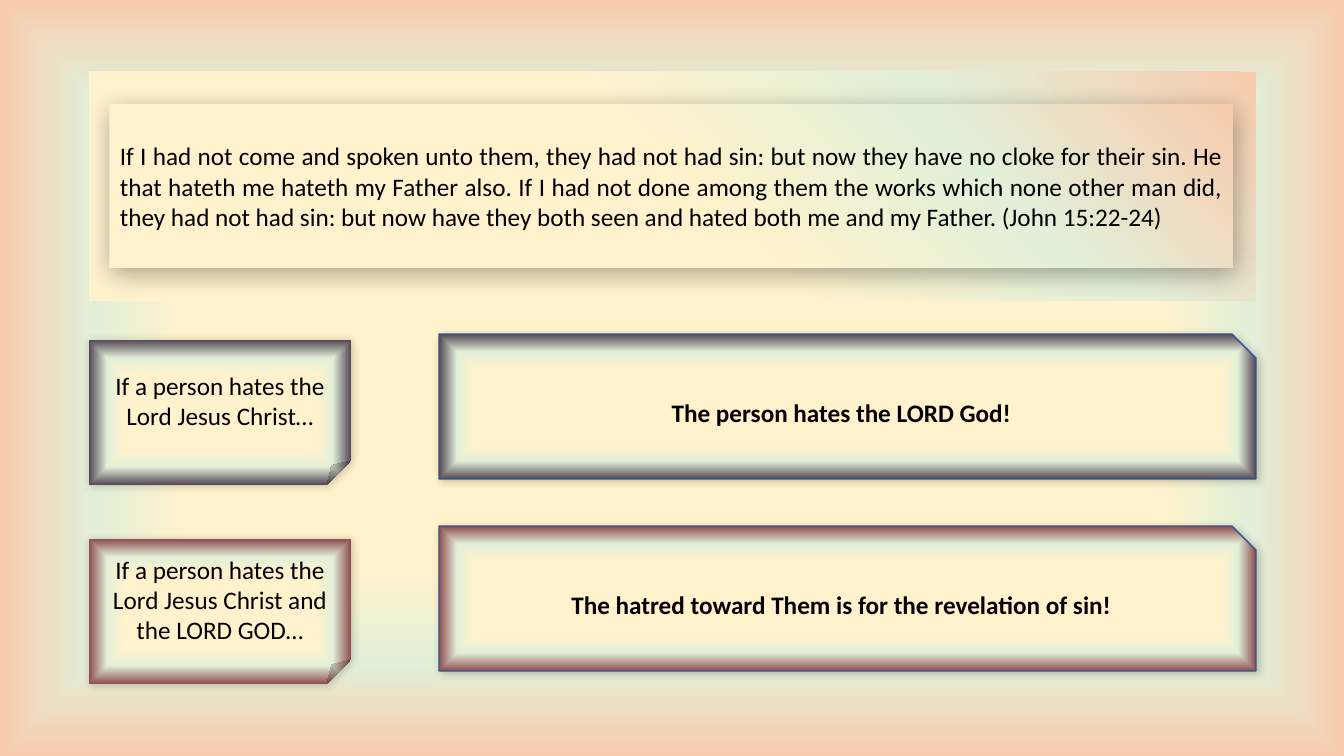
from dataclasses import dataclass

from lxml import etree
from pptx import Presentation
from pptx.dml.color import RGBColor
from pptx.enum.shapes import MSO_SHAPE
from pptx.enum.text import MSO_ANCHOR, PP_ALIGN
from pptx.oxml import parse_xml
from pptx.oxml.ns import nsdecls, qn
from pptx.util import Emu, Pt

RECT, FOLDED, SNIPPED = MSO_SHAPE.RECTANGLE, MSO_SHAPE.FOLDED_CORNER, MSO_SHAPE.SNIP_1_RECTANGLE
CENTER, JUSTIFY = PP_ALIGN.CENTER, PP_ALIGN.JUSTIFY
MIDDLE = MSO_ANCHOR.MIDDLE

SLIDE_W, SLIDE_H = 1344, 756
SCALE = 12192000 / SLIDE_W
FONT = "Calibri"
COLORS = {
    "cream": "FFF2CC",
    "mint": "E2F0D9",
    "peach": "F8CBAD",
    "plum": "544856",
    "wine": "8E4C51",
    "blue": "325491",
    "black": "000000",
}
CENTERED = (50, 50, 50, 50)
CORNER = (0, 100, 100, 0)

VERSE = (
    "If I had not come and spoken unto them, they had not had sin: but now they have "
    "no cloke for their sin. He that hateth me hateth my Father also. If I had not done "
    "among them the works which none other man did, they had not had sin: but now have "
    "they both seen and hated both me and my Father. (John 15:22-24)"
)


@dataclass(frozen=True)
class Shadow:
    alpha: int
    blur: float
    dist: float
    angle: int


@dataclass(frozen=True)
class Argument:
    premise: str
    conclusion: str
    edge: str
    premise_y: int
    conclusion_y: int


PANEL_SHADOW = Shadow(33, 17.8, 4, 87)
CARD_SHADOW = Shadow(20, 6, 1, 45)
CARD_H = 145
ARGUMENTS = [
    Argument("If a person hates the Lord Jesus Christ…",
             "The person hates the LORD God!", "plum", 340, 334),
    Argument("If a person hates the Lord Jesus Christ and the LORD GOD…",
             "The hatred toward Them is for the revelation of sin!", "wine", 539, 526),
]


def px(n: int) -> Emu:
    return Emu(round(n * SCALE))


def gradient(edge: str, path: str, focus: tuple) -> etree._Element:
    stops = "".join(
        f'<a:gs pos="{pos * 1000}"><a:srgbClr val="{COLORS[name]}"/></a:gs>'
        for pos, name in ((51, "cream"), (75, "mint"), (100, edge))
    )
    sides = " ".join(f'{side}="{v * 1000}"' for side, v in zip("ltrb", focus))
    return parse_xml(
        f'<a:gradFill {nsdecls("a")} rotWithShape="1"><a:gsLst>{stops}</a:gsLst>'
        f'<a:path path="{path}"><a:fillToRect {sides}/></a:path></a:gradFill>'
    )


def set_background(s) -> None:
    s.background.fill.solid()
    solid = next(s.element.iter(qn("a:solidFill")))
    solid.getparent().replace(solid, gradient("peach", "rect", CENTERED))


def add_shadow(sp, shadow: Shadow) -> None:
    effects = sp.element.spPr.find(qn("a:effectLst"))
    effects.append(parse_xml(
        f'<a:outerShdw {nsdecls("a")} blurRad="{Pt(shadow.blur)}" dist="{Pt(shadow.dist)}" '
        f'dir="{shadow.angle * 60000}" algn="ctr" rotWithShape="0">'
        f'<a:srgbClr val="{COLORS["black"]}"><a:alpha val="{shadow.alpha * 1000}"/>'
        f'</a:srgbClr></a:outerShdw>'
    ))


def add_text(sp, text: str, *, align=CENTER, bold: bool = False) -> None:
    tf = sp.text_frame
    tf.word_wrap = True
    tf.vertical_anchor = MIDDLE
    p = tf.paragraphs[0]
    p.alignment = align
    r = p.add_run()
    r.text = text
    r.font.name = FONT
    r.font.size = Pt(18)
    r.font.bold = bold
    r.font.color.rgb = RGBColor.from_string(COLORS["black"])


def add_box(s, kind, x: int, y: int, w: int, h: int, *, edge: str, path: str = "rect",
            focus: tuple = CENTERED, line: str = "", shadow: Shadow | None = None):
    sp = s.shapes.add_shape(kind, px(x), px(y), px(w), px(h))
    sp.fill.background()
    sp.element.spPr.replace(sp.element.spPr.find(qn("a:noFill")), gradient(edge, path, focus))
    if line:
        sp.line.color.rgb = RGBColor.from_string(COLORS[line])
        sp.line.width = Pt(1)
    else:
        sp.line.fill.background()
    sp.shadow.inherit = False
    if shadow:
        add_shadow(sp, shadow)
    return sp


def main() -> None:
    prs = Presentation()
    prs.slide_width, prs.slide_height = px(SLIDE_W), px(SLIDE_H)
    s = prs.slides.add_slide(prs.slide_layouts[6])
    set_background(s)

    add_box(s, RECT, 89, 72, 1167, 229, edge="peach", path="circle", focus=CORNER)
    verse = add_box(s, RECT, 110, 104, 1123, 164, edge="peach", path="circle",
                    focus=CORNER, shadow=PANEL_SHADOW)
    add_text(verse, VERSE, align=JUSTIFY)

    for arg in ARGUMENTS:
        premise = add_box(s, FOLDED, 89, arg.premise_y, 262, CARD_H,
                          edge=arg.edge, shadow=CARD_SHADOW)
        add_text(premise, arg.premise)
        conclusion = add_box(s, SNIPPED, 439, arg.conclusion_y, 817, CARD_H,
                             edge=arg.edge, line="blue", shadow=CARD_SHADOW)
        add_text(conclusion, arg.conclusion, bold=True)

    prs.save("out.pptx")


if __name__ == "__main__":
    main()
